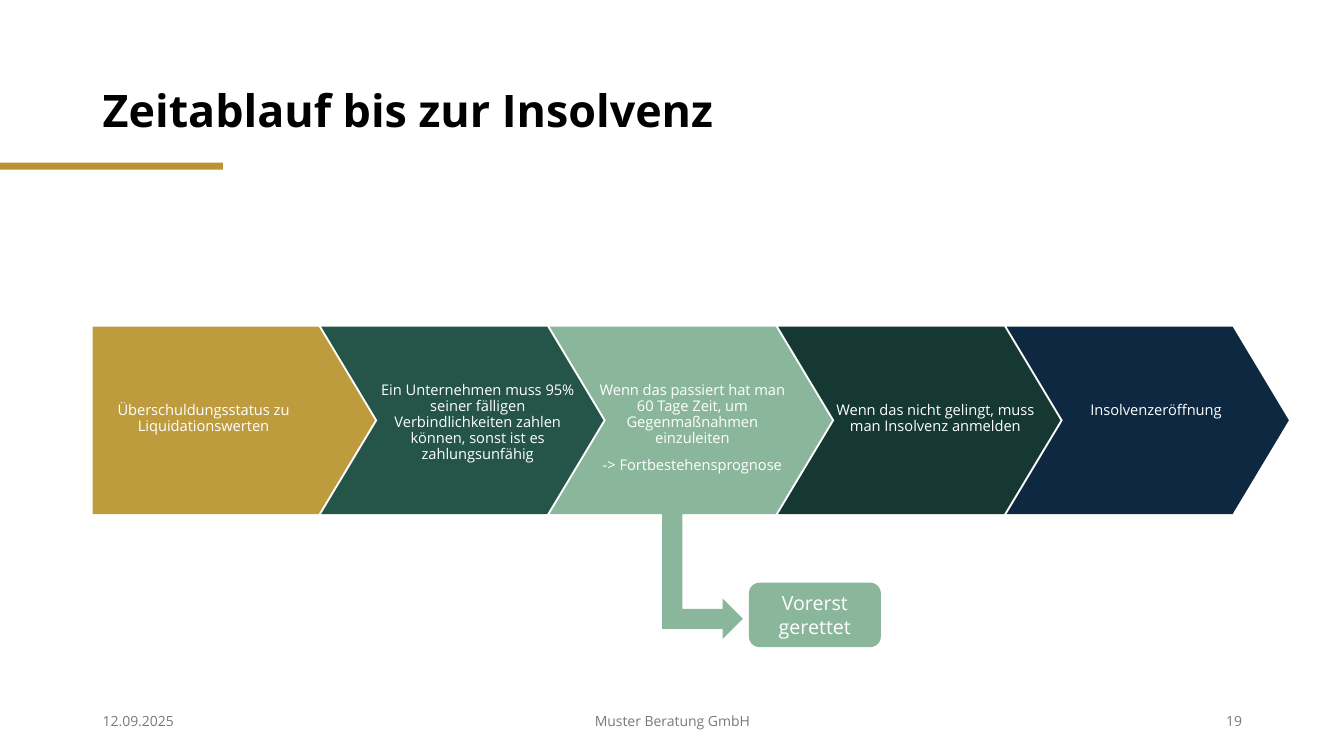
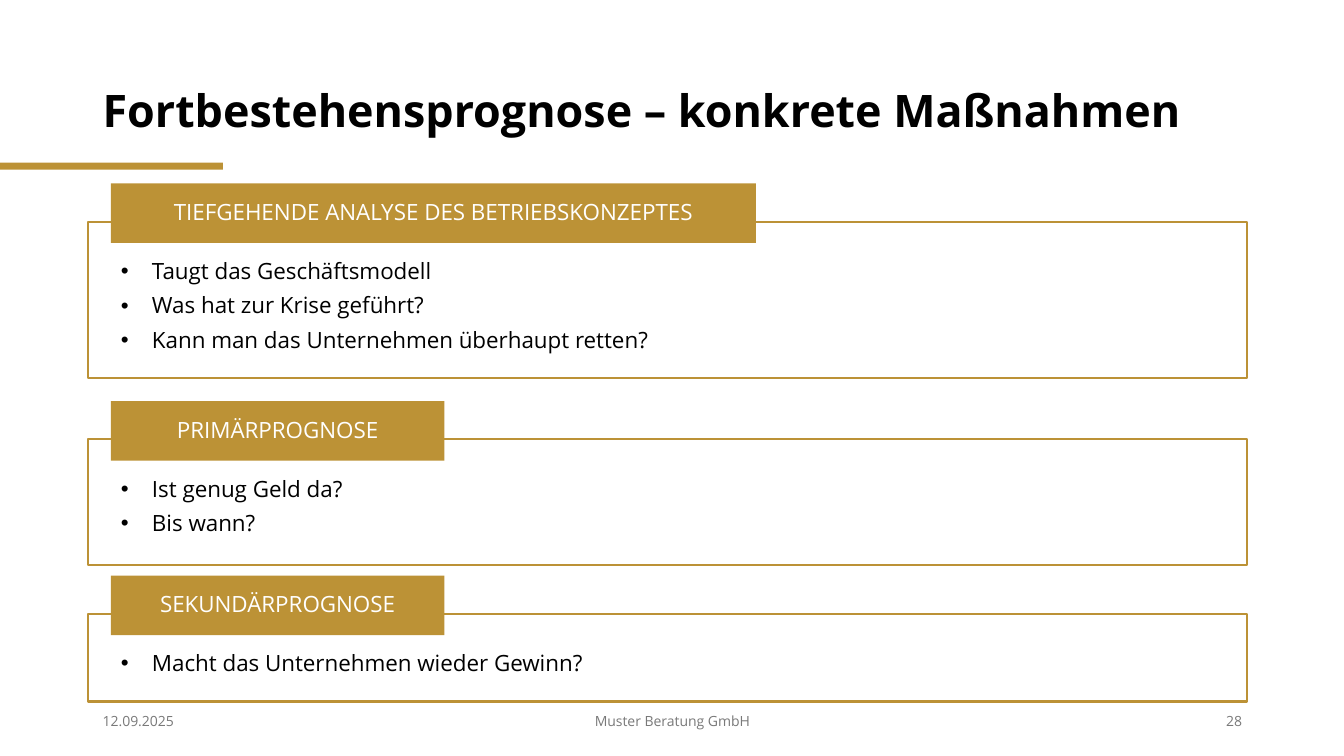
"""Builds two slides on the way to insolvency and the going-concern forecast."""
from dataclasses import dataclass

from lxml.etree import SubElement
from pptx import Presentation
from pptx.dml.color import RGBColor
from pptx.enum.shapes import MSO_SHAPE
from pptx.enum.text import MSO_ANCHOR, PP_ALIGN
from pptx.oxml.ns import qn
from pptx.shapes.autoshape import Shape
from pptx.slide import Slide
from pptx.util import Inches, Pt

FONT = "Open Sans"
GOLD, SAGE = "BC9236", "8AB79B"
BLACK, WHITE, GREY = "000000", "FFFFFF", "797979"
SLIDE_WIDTH, SLIDE_HEIGHT = Inches(13.33), Inches(7.5)
MARGIN, CONTENT_WIDTH = 6.9, 86.25
STEP_TOP, STEP_WIDTH, STEP_HEIGHT, STEP_PITCH = 43.2, 21, 24.8, 17
PANEL_LEFT, PANEL_INSET = 6.52, 1.73
HEADING_RISE, HEADING_HEIGHT, LIST_DROP = 5.07, 7.87, 4.4


@dataclass(frozen=True)
class Area:
    """A rectangle in percent of the slide's width and height."""
    left: float
    top: float
    width: float
    height: float

    def lengths(self) -> tuple[int, int, int, int]:
        """Returns the rectangle in slide units."""
        return (int(SLIDE_WIDTH * self.left / 100), int(SLIDE_HEIGHT * self.top / 100),
                int(SLIDE_WIDTH * self.width / 100), int(SLIDE_HEIGHT * self.height / 100))


@dataclass(frozen=True)
class TextStyle:
    """The look of all paragraphs in one box."""
    size: float
    color: str
    align: PP_ALIGN = PP_ALIGN.LEFT
    anchor: MSO_ANCHOR = MSO_ANCHOR.MIDDLE
    bold: bool = False
    line_spacing: float = 1.0
    gap: float = 0
    bulleted: bool = False


@dataclass(frozen=True)
class Step:
    """One arrow of the timeline; the label shift counts from its left edge."""
    color: str
    label_shift: float
    label_top: float
    paragraphs: tuple[str, ...]


@dataclass(frozen=True)
class Panel:
    """A framed list with a heading on its upper edge."""
    top: float
    height: float
    heading_width: float
    heading: str
    questions: tuple[str, ...]


TITLE = TextStyle(32, BLACK, bold=True, line_spacing=0.9)
STEP_LABEL = TextStyle(10.5, WHITE, PP_ALIGN.CENTER, MSO_ANCHOR.TOP, line_spacing=0.9, gap=8)
OUTCOME = TextStyle(14, WHITE, PP_ALIGN.CENTER)
HEADING = TextStyle(16, WHITE, PP_ALIGN.CENTER, line_spacing=0.9)
QUESTIONS = TextStyle(16, BLACK, anchor=MSO_ANCHOR.TOP, line_spacing=0.9, gap=7.5, bulleted=True)

STEPS = (
    Step("BE9C3E", 0, 52.67, ("Überschuldungsstatus zu Liquidationswerten",)),
    Step("255448", 3.4, 50, ("Ein Unternehmen muss 95% seiner fälligen Verbindlichkeiten "
                             "zahlen können, sonst ist es zahlungsunfähig",)),
    Step(SAGE, 2.37, 50, ("Wenn das passiert hat man 60 Tage Zeit, um Gegenmaßnahmen einzuleiten",
                          "-> Fortbestehensprognose")),
    Step("153832", 3.45, 52.67, ("Wenn das nicht gelingt, muss man Insolvenz anmelden",)),
    Step("0E2841", 2.87, 52.67, ("Insolvenzeröffnung",)),
)
PANELS = (
    Panel(29.33, 20.67, 48, "TIEFGEHENDE ANALYSE DES BETRIEBSKONZEPTES",
          ("Taugt das Geschäftsmodell", "Was hat zur Krise geführt?",
           "Kann man das Unternehmen überhaupt retten?")),
    Panel(58.13, 16.67, 24.82, "PRIMÄRPROGNOSE", ("Ist genug Geld da?", "Bis wann?")),
    Panel(81.2, 11.6, 24.82, "SEKUNDÄRPROGNOSE", ("Macht das Unternehmen wieder Gewinn?",)),
)


def rgb(color: str) -> RGBColor:
    """Turns a hex string into a colour."""
    return RGBColor.from_string(color)


def write(box: Shape, paragraphs: tuple[str, ...], style: TextStyle) -> None:
    """Fills a box with styled paragraphs."""
    frame = box.text_frame
    frame.word_wrap = True
    frame.vertical_anchor = style.anchor
    frame.text = "\n".join(paragraphs)
    for index, paragraph in enumerate(frame.paragraphs):
        paragraph.alignment = style.align
        paragraph.line_spacing = style.line_spacing
        paragraph.space_before = Pt(style.gap if index else 0)
        if style.bulleted:
            properties = paragraph._p.get_or_add_pPr()
            properties.set("marL", str(Inches(0.31)))
            properties.set("indent", str(-Inches(0.31)))
            SubElement(properties, qn("a:buFont"), typeface="Arial")
            SubElement(properties, qn("a:buChar"), char="•")
        for run in paragraph.runs:
            run.font.name = FONT
            run.font.size = Pt(style.size)
            run.font.bold = style.bold
            run.font.color.rgb = rgb(style.color)


def add_text(slide: Slide, area: Area, paragraphs: tuple[str, ...], style: TextStyle) -> None:
    """Adds a text box."""
    write(slide.shapes.add_textbox(*area.lengths()), paragraphs, style)


def add_filled(slide: Slide, kind: MSO_SHAPE, area: Area, color: str) -> Shape:
    """Adds a shape with a plain fill and no line."""
    shape = slide.shapes.add_shape(kind, *area.lengths())
    shape.shadow.inherit = False
    shape.fill.solid()
    shape.fill.fore_color.rgb = rgb(color)
    shape.line.fill.background()
    return shape


def add_base(deck: Presentation, title: str, number: int) -> Slide:
    """Adds a blank slide with accent bar, title and footer."""
    slide = deck.slides.add_slide(deck.slide_layouts[6])
    add_filled(slide, MSO_SHAPE.RECTANGLE, Area(0, 21.53, 16.58, 0.93), GOLD)
    add_text(slide, Area(MARGIN, 5.33, CONTENT_WIDTH, 19.33), (title,), TITLE)
    footer = (
        (MARGIN, 22.5, "12.09.2025", PP_ALIGN.LEFT),
        (33.15, 33.75, "Muster Beratung GmbH", PP_ALIGN.CENTER),
        (70.65, 22.5, str(number), PP_ALIGN.RIGHT),
    )
    for left, width, text, align in footer:
        add_text(slide, Area(left, 92.67, width, 5.33), (text,), TextStyle(10, GREY, align))
    return slide


def add_step(slide: Slide, index: int, step: Step) -> None:
    """Draws one arrow of the timeline with its label."""
    left = MARGIN + index * STEP_PITCH
    kind = MSO_SHAPE.CHEVRON if index else MSO_SHAPE.PENTAGON
    arrow = add_filled(slide, kind, Area(left, STEP_TOP, STEP_WIDTH, STEP_HEIGHT), step.color)
    arrow.adjustments[0] = 0.3
    label_area = Area(left + step.label_shift, step.label_top, 16.5, 13.2)
    add_text(slide, label_area, step.paragraphs, STEP_LABEL)


def add_panel(slide: Slide, panel: Panel) -> None:
    """Draws a frame, its questions and its heading."""
    area = Area(PANEL_LEFT, panel.top, CONTENT_WIDTH, panel.height)
    border = add_filled(slide, MSO_SHAPE.RECTANGLE, area, GOLD)
    border.fill.background()
    border.line.color.rgb = rgb(GOLD)
    border.line.width = Pt(1.5)
    left = PANEL_LEFT + PANEL_INSET
    list_area = Area(left, panel.top + LIST_DROP, 83.4, panel.height - LIST_DROP)
    add_text(slide, list_area, panel.questions, QUESTIONS)
    heading_area = Area(left, panel.top - HEADING_RISE, panel.heading_width, HEADING_HEIGHT)
    heading = add_filled(slide, MSO_SHAPE.RECTANGLE, heading_area, GOLD)
    write(heading, (panel.heading,), HEADING)


def add_timeline_slide(deck: Presentation) -> None:
    """Builds the timeline slide."""
    slide = add_base(deck, "Zeitablauf bis zur Insolvenz", 19)
    for index, step in enumerate(STEPS):
        add_step(slide, index, step)
    branch = add_filled(slide, MSO_SHAPE.BENT_UP_ARROW, Area(47.62, 70.93, 9.3, 10.67), SAGE)
    branch.rotation = 90
    rescue_area = Area(55.72, 77.07, 9.82, 8.53)
    rescue = add_filled(slide, MSO_SHAPE.ROUNDED_RECTANGLE, rescue_area, SAGE)
    write(rescue, ("Vorerst", "gerettet"), OUTCOME)


def add_forecast_slide(deck: Presentation) -> None:
    """Builds the slide with the three forecast panels."""
    slide = add_base(deck, "Fortbestehensprognose – konkrete Maßnahmen", 28)
    for panel in PANELS:
        add_panel(slide, panel)


def main() -> None:
    """Builds and saves the deck."""
    deck = Presentation()
    deck.slide_width, deck.slide_height = SLIDE_WIDTH, SLIDE_HEIGHT
    add_timeline_slide(deck)
    add_forecast_slide(deck)
    deck.save("out.pptx")


if __name__ == "__main__":
    main()
